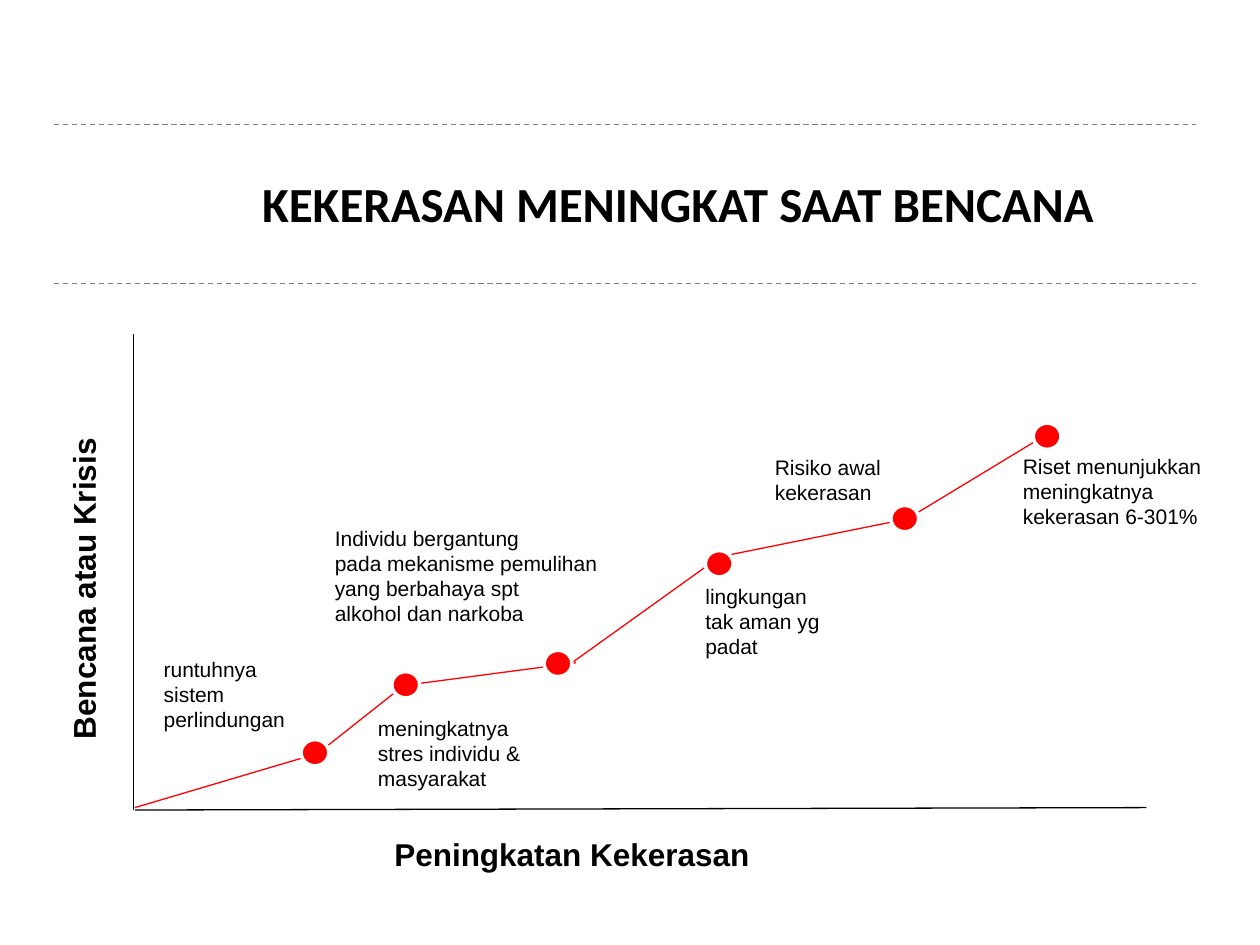
from dataclasses import dataclass

from lxml import etree
from pptx import Presentation
from pptx.dml.color import RGBColor
from pptx.enum.dml import MSO_LINE
from pptx.enum.shapes import MSO_CONNECTOR, MSO_SHAPE
from pptx.enum.text import MSO_ANCHOR, MSO_AUTO_SIZE, PP_ALIGN
from pptx.oxml.ns import qn
from pptx.util import Cm, Pt

DASH = MSO_LINE.DASH
STRAIGHT = MSO_CONNECTOR.STRAIGHT
OVAL = MSO_SHAPE.OVAL
MIDDLE = MSO_ANCHOR.MIDDLE
TOP = MSO_ANCHOR.TOP
FIT_SHAPE = MSO_AUTO_SIZE.SHAPE_TO_FIT_TEXT
NO_FIT = MSO_AUTO_SIZE.NONE
LEFT = PP_ALIGN.LEFT


@dataclass(frozen=True)
class Theme:
    ink: RGBColor = RGBColor(0, 0, 0)
    rule: RGBColor = RGBColor(128, 128, 128)
    trend: RGBColor = RGBColor(255, 0, 0)
    paper: RGBColor = RGBColor(255, 255, 255)
    title_font: str = "Calibri"
    body_font: str = "Arial"
    title_size: int = 28
    axis_size: int = 18
    label_size: int = 12
    line_width: float = 0.75
    halo_width: float = 2


RULE_HEIGHTS = (5.72, 2.51)
TREND_SEGMENTS = (
    ((2.72, 16.28), (6.5, 15.16)),
    ((6.38, 15.21), (8.2, 13.77)),
    ((18.24, 10.49), (21.26, 8.66)),
    ((8.13, 13.82), (11.61, 13.36)),
    ((11.53, 13.36), (14.5, 11.23)),
    ((14.48, 11.23), (18.29, 10.46)),
)
DOTS = (
    (6.07, 14.91), (7.9, 13.54), (10.97, 13.11),
    (14.22, 11.1), (17.96, 10.19), (20.83, 8.53),
)
DOT_SIZE = (0.56, 0.53)
LABELS = (
    ("runtuhnya\nsistem\nperlindungan", (3.05, 13.11, 2.97, 1.8), False),
    ("meningkatnya\nstres individu &\nmasyarakat", (7.37, 14.3, 3.4, 1.8), False),
    ("Individu bergantung\npada mekanisme pemulihan\nyang berbahaya spt\nalkohol dan narkoba",
     (6.5, 10.46, 5.84, 2.31), False),
    ("lingkungan\ntak aman yg\npadat", (13.97, 11.63, 2.84, 1.8), False),
    ("Risiko awal\nkekerasan", (15.37, 9.04, 2.97, 1.27), True),
    ("Riset menunjukkan\nmeningkatnya\nkekerasan 6-301%", (20.37, 9.02, 5.99, 2.31), True),
)


def write_text(frame, text, *, font, size, color, bold=False, wrap=True,
               anchor=TOP, fit=FIT_SHAPE):
    frame.text = text
    frame.word_wrap = wrap
    frame.auto_size = fit
    frame.vertical_anchor = anchor
    for paragraph in frame.paragraphs:
        paragraph.alignment = LEFT
        for run in paragraph.runs:
            run.font.name = font
            run.font.size = Pt(size)
            run.font.bold = bold
            run.font.color.rgb = color


class SlideBuilder:
    def __init__(self, slide, theme):
        self.slide = slide
        self.theme = theme

    def title(self, text, box):
        theme = self.theme
        shape = self.slide.shapes.title
        shape.left, shape.top, shape.width, shape.height = map(Cm, box)
        write_text(shape.text_frame, text, font=theme.title_font, size=theme.title_size,
                   color=theme.ink, bold=True, anchor=MIDDLE, fit=NO_FIT)

    def line(self, start, end, color, dash=None):
        connector = self.slide.shapes.add_connector(STRAIGHT, *map(Cm, (*start, *end)))
        connector.line.color.rgb = color
        connector.line.width = Pt(self.theme.line_width)
        if dash is not None:
            connector.line.dash_style = dash
        etree.SubElement(connector._element.spPr, qn("a:effectLst"))

    def dot(self, position):
        shape = self.slide.shapes.add_shape(OVAL, *map(Cm, (*position, *DOT_SIZE)))
        shape.shadow.inherit = False
        shape.fill.solid()
        shape.fill.fore_color.rgb = self.theme.trend
        shape.line.color.rgb = self.theme.paper
        shape.line.width = Pt(self.theme.halo_width)

    def text(self, text, box, size, bold=False, wrap=False, rotation=0):
        shape = self.slide.shapes.add_textbox(*map(Cm, box))
        shape.rotation = rotation
        write_text(shape.text_frame, text, font=self.theme.body_font, size=size,
                   color=self.theme.ink, bold=bold, wrap=wrap)


def main():
    presentation = Presentation()
    presentation.slide_width = Cm(25.4)
    presentation.slide_height = Cm(19.05)
    theme = Theme()
    slide = presentation.slides.add_slide(presentation.slide_layouts[5])
    builder = SlideBuilder(slide, theme)

    for height in RULE_HEIGHTS:
        builder.line((1.09, height), (24.1, height), theme.rule, DASH)
    builder.title("KEKERASAN MENINGKAT SAAT BENCANA", (5.03, 2.51, 19.05, 3.18))

    builder.line((2.69, 6.73), (2.69, 16.33), theme.ink)
    builder.line((23.11, 16.28), (2.72, 16.33), theme.ink)
    builder.text("Bencana atau Krisis", (-1.63, 11.33, 6.63, 1.02), theme.axis_size,
                 bold=True, rotation=270)
    builder.text("Peningkatan Kekerasan", (7.7, 16.71, 7.75, 1.02), theme.axis_size, bold=True)

    for start, end in TREND_SEGMENTS:
        builder.line(start, end, theme.trend)
    for position in DOTS:
        builder.dot(position)
    for text, box, wrap in LABELS:
        builder.text(text, box, theme.label_size, wrap=wrap)

    presentation.save("out.pptx")


if __name__ == "__main__":
    main()
